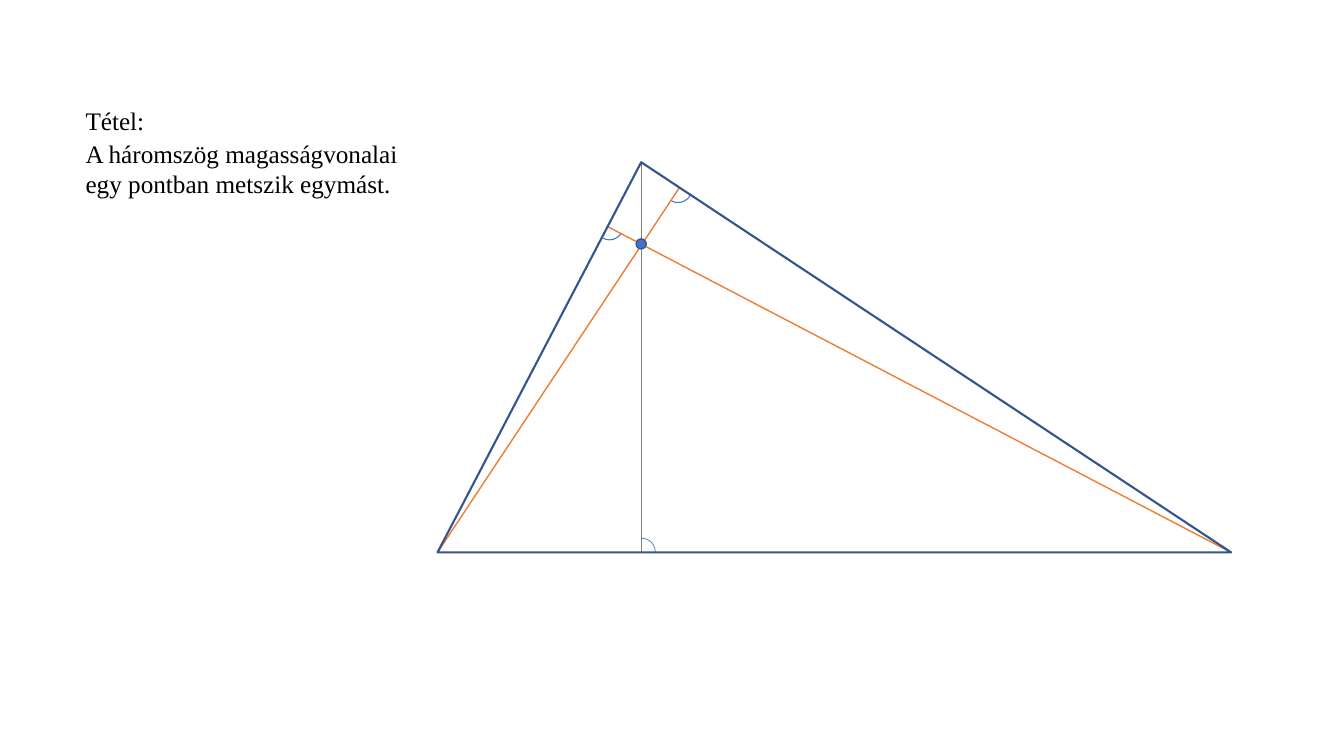
"""Build a slide on the theorem that a triangle's altitudes meet in one point."""
from pptx import Presentation
from pptx.dml.color import RGBColor
from pptx.enum.shapes import MSO_CONNECTOR, MSO_SHAPE
from pptx.enum.text import MSO_AUTO_SIZE
from pptx.oxml.ns import qn
from pptx.util import Pt
from lxml import etree

PX = 9144
STRAIGHT = MSO_CONNECTOR.STRAIGHT
ARC, TRIANGLE, OVAL = MSO_SHAPE.ARC, MSO_SHAPE.ISOSCELES_TRIANGLE, MSO_SHAPE.OVAL
GROW = MSO_AUTO_SIZE.SHAPE_TO_FIT_TEXT
BLUE, DARK_BLUE, ORANGE, GREY, BLACK = "4472C4", "325491", "ED7D31", "7F7F7F", "000000"


def color(hex_code):
    return RGBColor.from_string(hex_code)


def add_outline(kind, left, top, width, height, line, weight, fill=None):
    outline = slide.shapes.add_shape(kind, left * PX, top * PX, width * PX, height * PX)
    outline.shadow.inherit = False
    if fill:
        outline.fill.solid()
        outline.fill.fore_color.rgb = color(fill)
    else:
        outline.fill.background()
    outline.line.color.rgb = color(line)
    outline.line.width = Pt(weight)
    return outline


prs = Presentation()
prs.slide_width, prs.slide_height = 1333 * PX, 750 * PX
slide = prs.slides.add_slide(prs.slide_layouts[6])

for left, top, turn, weight in [(591, 211, 120, 0.75), (623, 534, 0, 0.5), (659, 174, 120, 0.75)]:
    right_angle = add_outline(ARC, left, top, 27, 27, BLUE, weight)
    right_angle.rotation = turn

left_corner, right_corner, apex = (434, 548), (1221, 548), (636, 161)
altitudes = [
    (right_corner, left_corner, apex, ORANGE, 1),
    (apex, left_corner, right_corner, GREY, 0.5),
    (left_corner, apex, right_corner, ORANGE, 1),
]
for (x, y), (x1, y1), (x2, y2), stroke, weight in altitudes:
    dx, dy = x2 - x1, y2 - y1
    ratio = ((x - x1) * dx + (y - y1) * dy) / (dx * dx + dy * dy)
    foot_x, foot_y = round(x1 + ratio * dx), round(y1 + ratio * dy)
    altitude = slide.shapes.add_connector(STRAIGHT, foot_x * PX, foot_y * PX, x * PX, y * PX)
    altitude.line.color.rgb = color(stroke)
    altitude.line.width = Pt(weight)
    etree.SubElement(altitude._element.spPr, qn("a:effectLst"))

base = right_corner[0] - left_corner[0]
triangle = add_outline(TRIANGLE, left_corner[0], apex[1], base, left_corner[1] - apex[1], DARK_BLUE, 1.5)
triangle.adjustments[0] = (apex[0] - left_corner[0]) / base
add_outline(OVAL, 631, 237, 10, 10, DARK_BLUE, 1, BLUE)

statements = [
    ("A háromszög magasságvonalai egy pontban metszik egymást.", 132, 339, 71),
    ("Tétel:", 100, 267, 40),
]
for wording, top, width, height in statements:
    statement = slide.shapes.add_textbox(75 * PX, top * PX, width * PX, height * PX)
    frame = statement.text_frame
    frame.word_wrap = True
    frame.auto_size = GROW
    frame.text = wording
    font = frame.paragraphs[0].runs[0].font
    font.name, font.size = "Times New Roman", Pt(18)
    font.color.rgb = color(BLACK)

prs.save("out.pptx")
